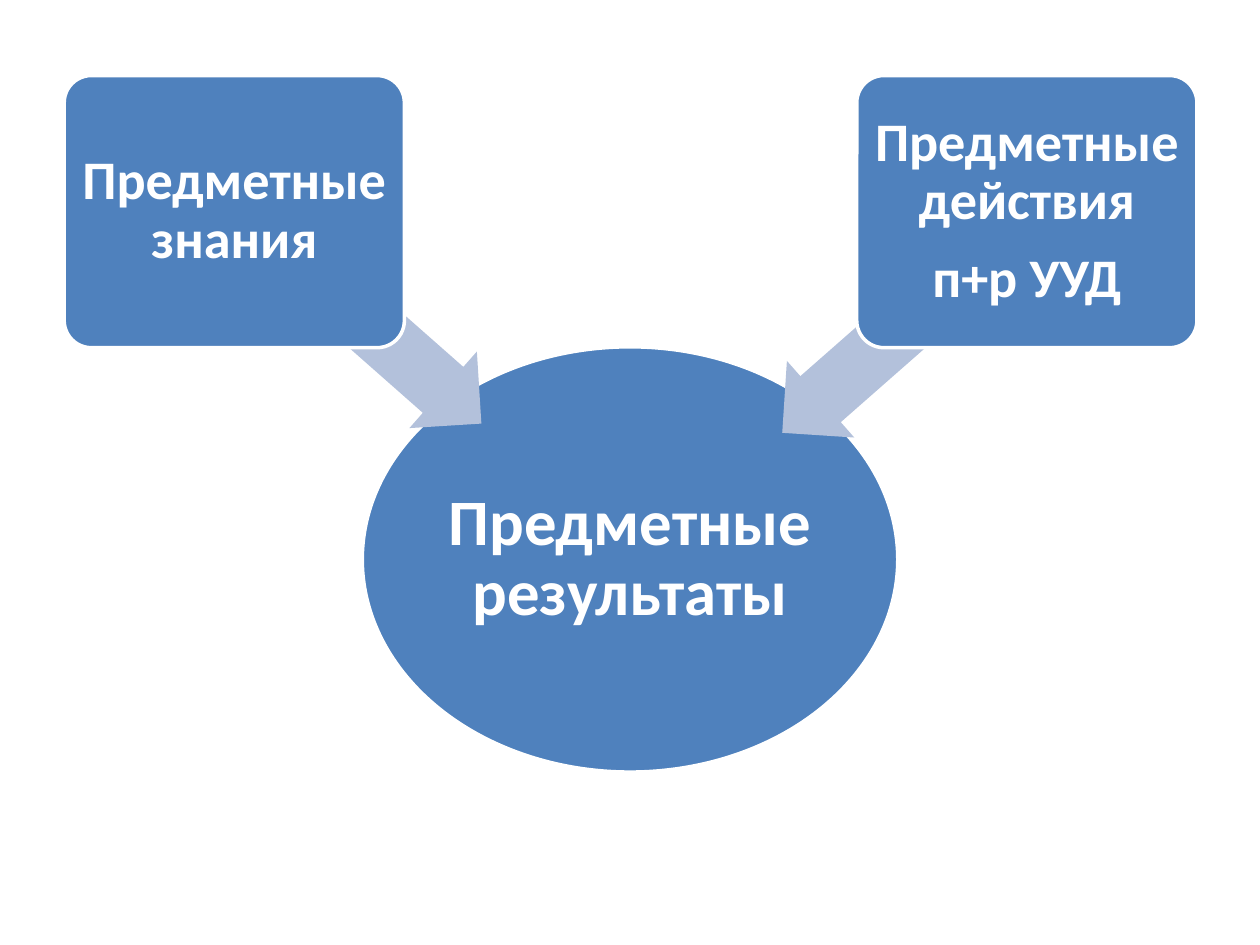
from dataclasses import dataclass

from pptx import Presentation
from pptx.dml.color import RGBColor
from pptx.enum.shapes import MSO_SHAPE
from pptx.enum.text import MSO_ANCHOR, PP_ALIGN
from pptx.util import Inches, Pt

SLIDE_WIDTH, SLIDE_HEIGHT = 10, 7.5


@dataclass(frozen=True)
class Theme:
    """Colours, font and type sizes of the slide."""

    font: str = "Calibri"
    main: RGBColor = RGBColor(0x4F, 0x81, 0xBD)
    arrow: RGBColor = RGBColor(0xB3, 0xC1, 0xDB)
    light: RGBColor = RGBColor(0xFF, 0xFF, 0xFF)
    result_size: int = 37
    source_size: int = 31
    outline: int = 2


THEME = Theme()


def add_filled_shape(slide, kind, box, color):
    """Add a flat shape in a box given as left, top, width, height in inches."""
    shape = slide.shapes.add_shape(kind, *(Inches(length) for length in box))
    shape.shadow.inherit = False
    shape.fill.solid()
    shape.fill.fore_color.rgb = color
    shape.line.fill.background()
    return shape


def add_node(slide, kind, box, lines, size, inset):
    """Add an outlined shape with centred bold paragraphs."""
    shape = add_filled_shape(slide, kind, box, THEME.main)
    shape.line.color.rgb = THEME.light
    shape.line.width = Pt(THEME.outline)
    frame = shape.text_frame
    frame.text = "\n".join(lines)
    frame.word_wrap = True
    frame.vertical_anchor = MSO_ANCHOR.MIDDLE
    frame.margin_left = frame.margin_right = Inches(inset)
    frame.margin_top = frame.margin_bottom = Inches(inset)
    for index, paragraph in enumerate(frame.paragraphs):
        paragraph.alignment = PP_ALIGN.CENTER
        paragraph.line_spacing = 0.9
        paragraph.space_before = Pt(0.35 * size if index else 0)
        font = paragraph.runs[0].font
        font.name, font.size, font.bold = THEME.font, Pt(size), True
        font.color.rgb = THEME.light
    return shape


def add_result(slide, box):
    """Place the ellipse that names the result."""
    add_node(slide, MSO_SHAPE.OVAL, box, ["Предметные результаты"], THEME.result_size, 0.03)


def add_source(slide, box, lines):
    """Place a rounded box that feeds the result."""
    node = add_node(slide, MSO_SHAPE.ROUNDED_RECTANGLE, box, lines, THEME.source_size, 0)
    node.adjustments[0] = 0.1


def add_arrow(slide, box, rotation):
    """Place a block arrow turned towards the result."""
    arrow = add_filled_shape(slide, MSO_SHAPE.LEFT_ARROW, box, THEME.arrow)
    arrow.adjustments[0], arrow.adjustments[1] = 0.6, 0.5
    arrow.rotation = rotation


def add_converging_diagram(slide, width, height):
    """Place two sources above the result, each with its arrow."""
    result_width, source_width = 0.425 * width, 0.27 * width
    source_top, source_height = 0.08 * height, 0.288 * height
    arrow_width, arrow_height = 0.216 * width, 0.108 * height
    result_left = (width - result_width) / 2
    add_result(slide, (result_left, 0.367 * height, result_width, 0.45 * height))
    branches = (
        (0.051, ["Предметные знания"], 0.193, 0.299, 221.4),
        (0.68, ["Предметные действия", "п+р УУД"], 0.594, 0.309, 318.7),
    )
    for source_left, lines, arrow_left, arrow_top, rotation in branches:
        arrow_box = (arrow_left * width, arrow_top * height, arrow_width, arrow_height)
        add_arrow(slide, arrow_box, rotation)
        source_box = (source_left * width, source_top, source_width, source_height)
        add_source(slide, source_box, lines)


def main():
    """Build and save the presentation."""
    presentation = Presentation()
    presentation.slide_width = Inches(SLIDE_WIDTH)
    presentation.slide_height = Inches(SLIDE_HEIGHT)
    slide = presentation.slides.add_slide(presentation.slide_layouts[6])
    add_converging_diagram(slide, SLIDE_WIDTH, SLIDE_HEIGHT)
    presentation.save("out.pptx")


if __name__ == "__main__":
    main()
